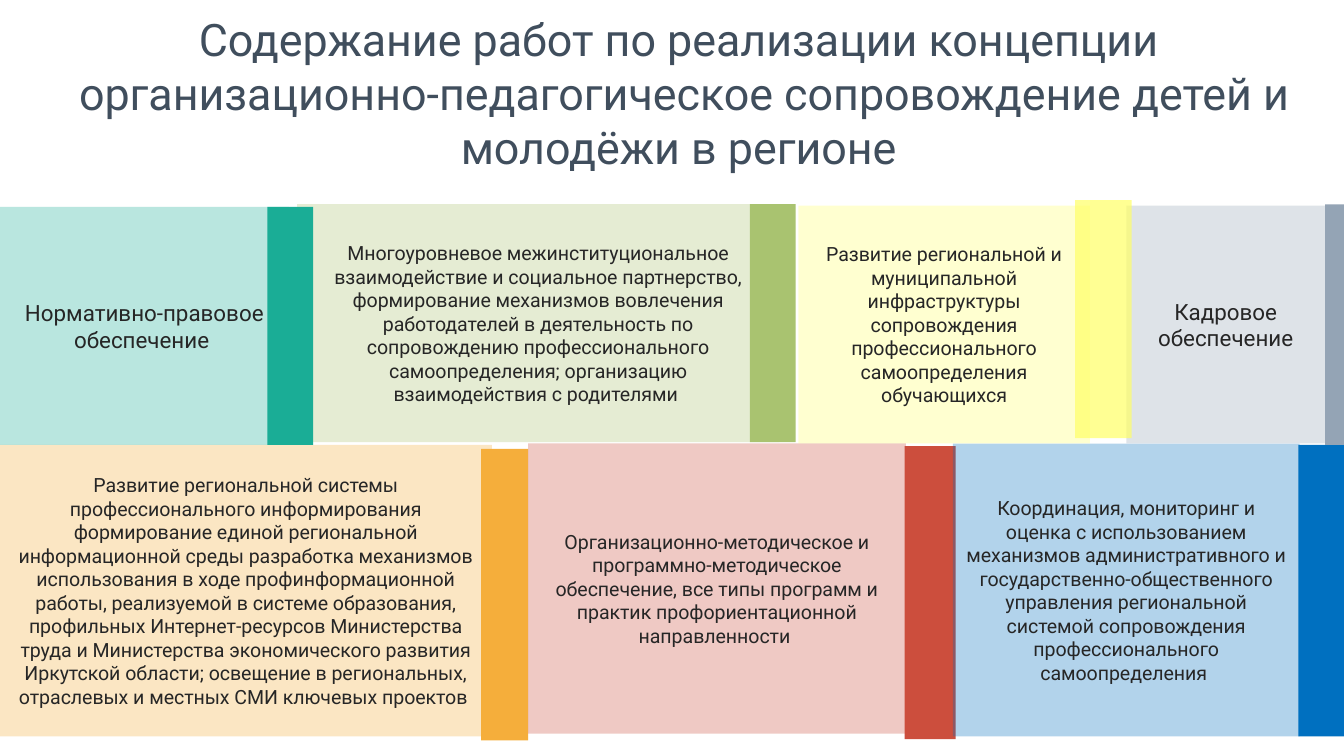
from lxml import etree
from pptx import Presentation
from pptx.dml.color import RGBColor
from pptx.enum.shapes import MSO_SHAPE
from pptx.enum.text import MSO_ANCHOR, MSO_AUTO_SIZE, PP_ALIGN
from pptx.oxml.ns import qn
from pptx.util import Inches, Pt

RECT = MSO_SHAPE.RECTANGLE
MIDDLE = MSO_ANCHOR.MIDDLE
CENTER = PP_ALIGN.CENTER
FIXED = MSO_AUTO_SIZE.NONE

THEME = {
    "font": "Roboto",
    "title": "404E5D", "ink": "262626",
    "orange": "F5AE3B", "red": "CC4E3D", "blue": "0070C0",
    "gray": "94A4B5", "yellow": "FFFF66", "green": "A9C370", "teal": "1AAD96",
    "head": 24, "large": 12, "body": 10.5,
    "tint": 30,
}


def write(shape, text, size, color, inset=None):
    """Fill a shape with centred text; inset overrides all margins."""
    frame = shape.text_frame
    frame.word_wrap = True
    frame.auto_size = FIXED
    frame.vertical_anchor = MIDDLE
    if inset is not None:
        frame.margin_left = frame.margin_right = Inches(inset)
        frame.margin_top = frame.margin_bottom = Inches(inset)
    frame.text = text
    for para in frame.paragraphs:
        para.alignment = CENTER
        for run in para.runs:
            run.font.name = THEME["font"]
            run.font.size = Pt(THEME[size])
            run.font.color.rgb = RGBColor.from_string(THEME[color])


def block(slide, box, color, alpha=100):
    """Add a borderless rectangle; alpha is its opacity in percent."""
    shape = slide.shapes.add_shape(RECT, *map(Inches, box))
    shape.shadow.inherit = False
    shape.line.fill.background()
    shape.fill.solid()
    shape.fill.fore_color.rgb = RGBColor.from_string(THEME[color])
    if alpha < 100:
        tone = shape.fill._xPr.find(qn("a:solidFill"))[0]
        etree.SubElement(tone, qn("a:alpha")).set("val", str(alpha * 1000))
    return shape


# A 16:9 slide, ten inches wide
deck = Presentation()
deck.slide_width = Inches(10)
deck.slide_height = Inches(10 * 9 / 16)
slide = deck.slides.add_slide(deck.slide_layouts[5])

# Title
title = slide.shapes.title
title.left, title.top = Inches(0.05), Inches(0.42)
title.width, title.height = Inches(10), Inches(0.54)
write(title, "Содержание работ по реализации концепции\v"
      " организационно-педагогическое сопровождение детей и молодёжи в регионе",
      "head", "title", inset=0)

# Topics from back to front: color, strip box, strip opacity, panel box, size, text
topics = [
    ("orange", (3.58, 3.34, 0.35, 2.17), 100, (0, 3.31, 3.66, 2.17), "body",
     "Развитие региональной системы профессионального информирования "
     "формирование единой региональной информационной среды разработка "
     "механизмов использования в ходе профинформационной работы, реализуемой "
     "в системе образования, профильных Интернет-ресурсов Министерства труда "
     "и Министерства экономического развития Иркутской области; освещение "
     "в региональных, отраслевых и местных СМИ ключевых проектов "),
    ("red", (6.73, 3.32, 0.38, 2.18), 100, (3.93, 3.3, 2.81, 2.16), "body",
     "Организационно-методическое и программно-методическое обеспечение, "
     "все типы программ и практик профориентационной направленности "),
    ("blue", (9.66, 3.31, 0.39, 2.17), 100, (7.09, 3.3, 2.58, 2.18), "body",
     "Координация, мониторинг и оценка с использованием механизмов "
     "административного и государственно-общественного управления "
     "региональной системой сопровождения профессионального самоопределения "),
    ("gray", (9.86, 1.52, 0.2, 1.79), 100, (8.38, 1.53, 1.48, 1.77), "large",
     "Кадровое обеспечение"),
    ("yellow", (8, 1.49, 0.42, 1.77), 70, (5.94, 1.53, 2.17, 1.77), "body",
     "Развитие региональной и муниципальной инфраструктуры сопровождения "
     "профессионального самоопределения обучающихся"),
    ("green", (5.58, 1.52, 0.34, 1.77), 100, (2.21, 1.52, 3.59, 1.77), "body",
     "Многоуровневое межинституциональное взаимодействие и социальное "
     "партнерство, формирование механизмов вовлечения работодателей "
     "в деятельность по сопровождению профессионального самоопределения; "
     "организацию взаимодействия с родителями "),
    ("teal", (1.99, 1.54, 0.34, 1.77), 100, (0, 1.54, 2.15, 1.77), "large",
     "Нормативно-правовое обеспечение "),
]

# Each topic is a solid strip with a tinted text panel over its edge
for color, strip, alpha, panel, size, text in topics:
    block(slide, strip, color, alpha)
    write(block(slide, panel, color, THEME["tint"]), text, size, "ink")

deck.save("out.pptx")
